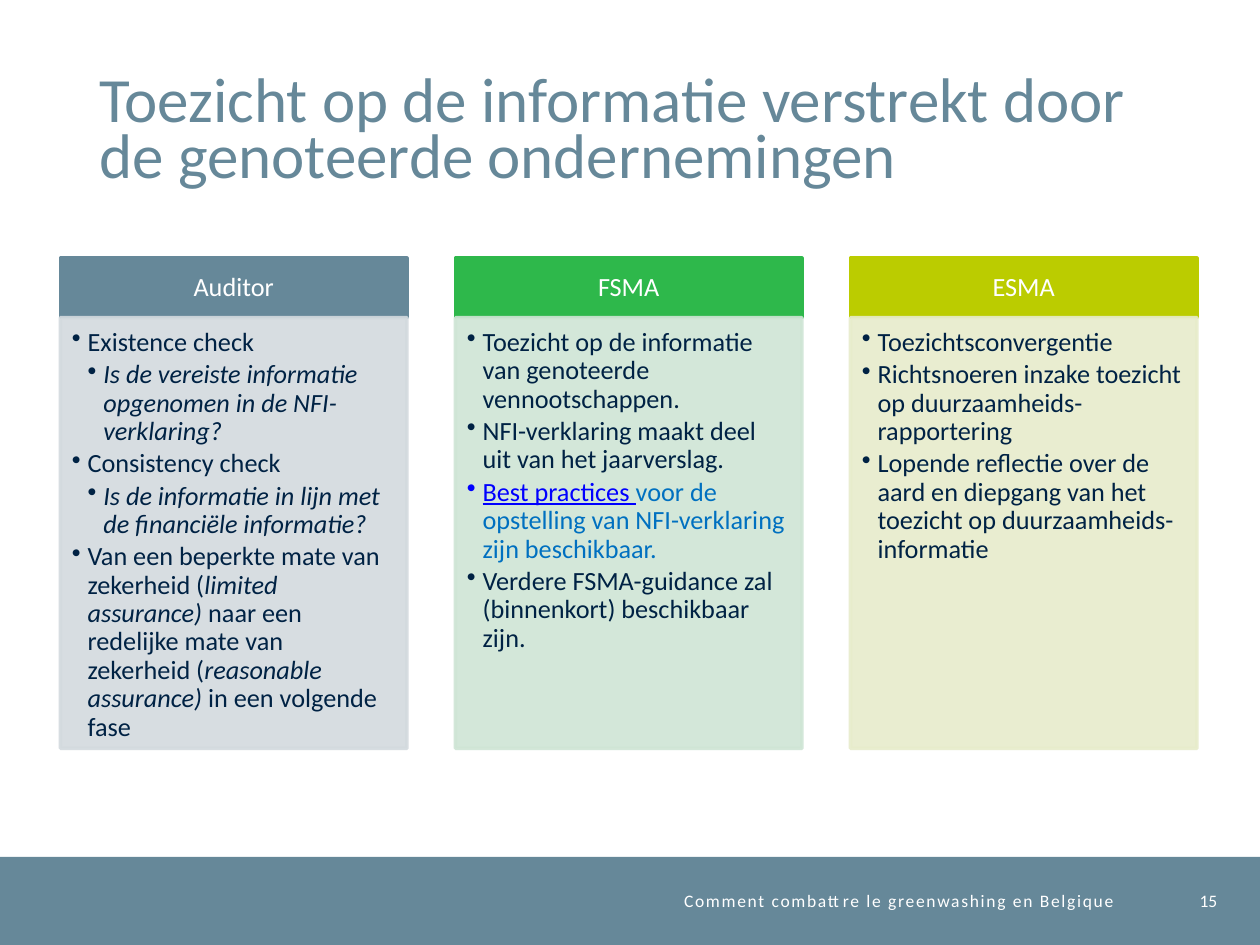
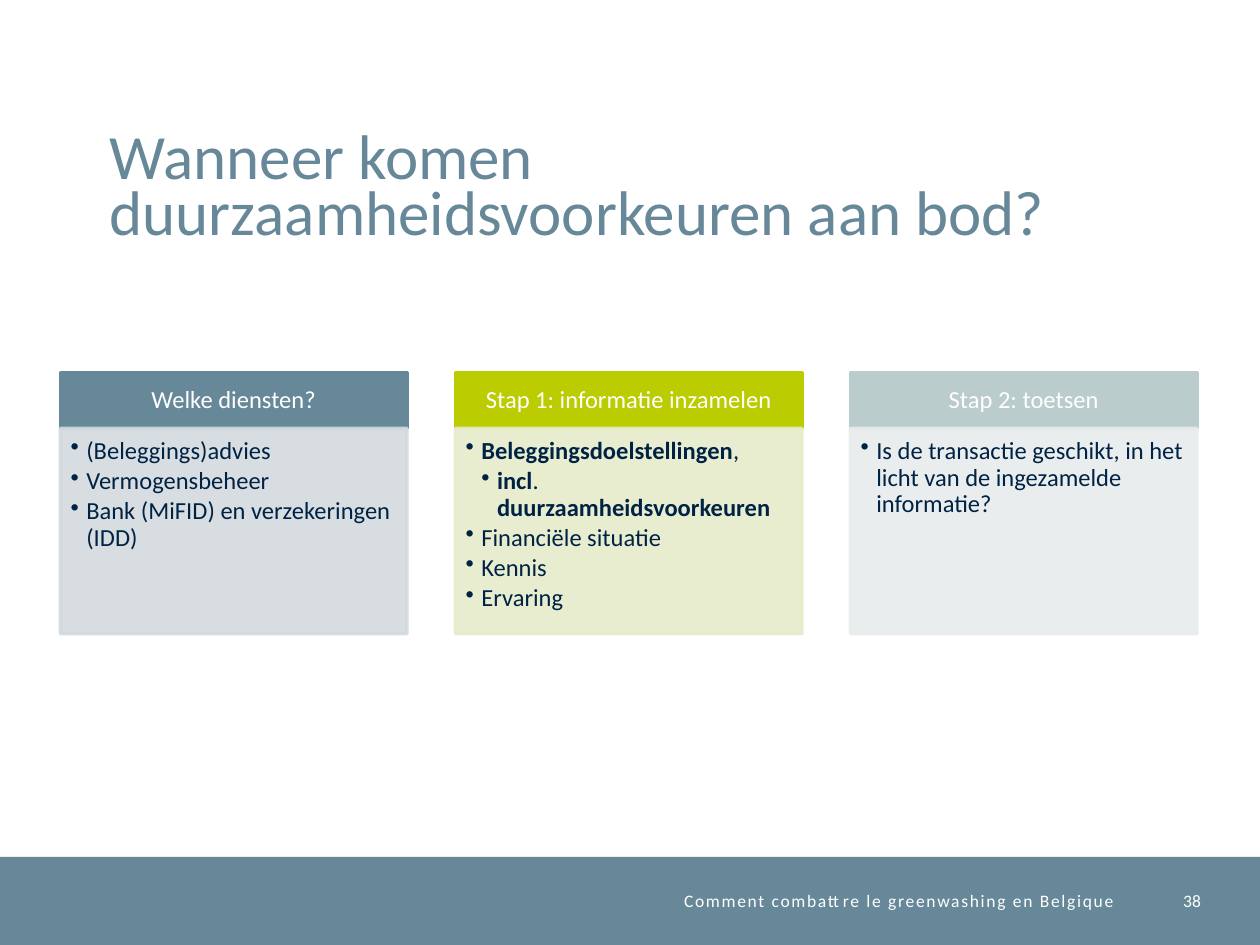
from dataclasses import dataclass

from lxml import etree
from pptx import Presentation
from pptx.dml.color import RGBColor
from pptx.enum.shapes import MSO_SHAPE
from pptx.enum.text import MSO_ANCHOR, MSO_AUTO_SIZE, PP_ALIGN
from pptx.oxml.ns import qn
from pptx.util import Inches, Pt

RECT = MSO_SHAPE.RECTANGLE
TOP, MIDDLE, BOTTOM = MSO_ANCHOR.TOP, MSO_ANCHOR.MIDDLE, MSO_ANCHOR.BOTTOM
LEFT, CENTER, RIGHT = PP_ALIGN.LEFT, PP_ALIGN.CENTER, PP_ALIGN.RIGHT
NO_FIT = MSO_AUTO_SIZE.NONE


@dataclass(frozen=True)
class Theme:
    font: str = "Calibri"
    slate: str = "668899"
    green: str = "2EB84B"
    lime: str = "BBCC00"
    mist: str = "BBCCCC"
    pale_slate: str = "D3DADE"
    pale_green: str = "CFE5D5"
    pale_lime: str = "E7ECCB"
    pale_mist: str = "E7ECEC"
    ink: str = "002244"
    white: str = "FFFFFF"
    link: str = "0000FF"
    blue: str = "0070C0"
    title: int = 36
    small: int = 10


THEME = Theme()
FOOTER = "Comment combattre le greenwashing en Belgique"
BAND_TOP, BAND_HIGH = 6.8, 0.7
CARD_LEFT, CARD_WIDE, CARD_STEP = 0.48, 2.75, 3.135
INDENT = 0.125


class Deck:
    def __init__(self, theme):
        self.theme = theme
        self.prs = Presentation()
        self.prs.slide_width = Inches(10)
        self.prs.slide_height = Inches(7.5)
        self.layout = self.prs.slide_layouts[5]
        self.slide = None

    def start(self):
        self.slide = self.prs.slides.add_slide(self.layout)
        if len(self.prs.slides) == 1:
            band = self.block((0, BAND_TOP, 10, BAND_HIGH), self.theme.slate)
            self.layout.shapes.element.insert(2, band.element)

    def frame(self, shape, anchor, pads=(0, 0, 0, 0)):
        frame = shape.text_frame
        frame.word_wrap = True
        frame.auto_size = NO_FIT
        frame.vertical_anchor = anchor
        left, top, right, bottom = pads
        frame.margin_left, frame.margin_top = Inches(left), Inches(top)
        frame.margin_right, frame.margin_bottom = Inches(right), Inches(bottom)
        return frame

    def run(self, para, text, size, color, style=""):
        run = para.add_run()
        run.text = text
        font = run.font
        font.name, font.size = self.theme.font, Pt(size)
        font.bold, font.italic = style == "bold", style == "italic"
        font.underline = style == "link"
        color = {"link": self.theme.link, "blue": self.theme.blue}.get(style, color)
        font.color.rgb = RGBColor.from_string(color)
        return run

    def title(self, text, left, top):
        shape = self.slide.shapes.title
        shape.left, shape.top = Inches(left), Inches(top)
        shape.width, shape.height = Inches(8.63), Inches(1.08)
        para = self.frame(shape, BOTTOM).paragraphs[0]
        para.alignment = LEFT
        para.line_spacing = Pt(32)
        self.run(para, text, self.theme.title, self.theme.slate)

    def label(self, text, left, wide, track=0):
        box = self.slide.shapes.add_textbox(
            *map(Inches, (left, BAND_TOP, wide, BAND_HIGH)))
        para = self.frame(box, MIDDLE).paragraphs[0]
        para.alignment = RIGHT
        run = self.run(para, text, self.theme.small, self.theme.white)
        if track:
            run.font._element.set("spc", str(track * 100))

    def footer(self, page, left):
        self.label(page, left, 0.49)
        self.label(FOOTER, 2.64, 6.2, track=1)

    def block(self, place, color, edge=0, alpha=100):
        shape = self.slide.shapes.add_shape(RECT, *map(Inches, place))
        shape.shadow.inherit = False
        shape.fill.solid()
        shape.fill.fore_color.rgb = RGBColor.from_string(color)
        if edge:
            shape.line.width = Pt(edge)
            shape.line.color.rgb = RGBColor.from_string(color)
        else:
            shape.line.fill.background()
        if alpha < 100:
            for tint in shape.element.spPr.iter(qn("a:srgbClr")):
                etree.SubElement(tint, qn("a:alpha"), val=str(alpha * 1000))
        return shape

    def bullet(self, para, level, size):
        para.level = level
        para.alignment = LEFT
        props = para._p.get_or_add_pPr()
        props.set("marL", str(Inches(INDENT * level)))
        props.set("indent", str(-Inches(INDENT)))
        etree.SubElement(props, qn("a:buChar"), char="•")
        para.line_spacing = 0.9
        para.space_after = Pt(size * 0.15)

    def card(self, left, top, highs, size, pads, head, items, color, pale):
        head_high, body_high = highs
        bar = self.block((left, top, CARD_WIDE, head_high), color, edge=2)
        para = self.frame(bar, MIDDLE, pads[0]).paragraphs[0]
        para.alignment = CENTER
        para.line_spacing = 0.9
        self.run(para, head, size, self.theme.white)

        body = self.block((left, top + head_high, CARD_WIDE, body_high),
                          pale, edge=2, alpha=90)
        frame = self.frame(body, TOP, pads[1])
        for index, (level, *parts) in enumerate(items):
            para = frame.add_paragraph() if index else frame.paragraphs[0]
            self.bullet(para, level, size)
            for text, *style in parts:
                self.run(para, text, size, self.theme.ink, *style)

    def cards(self, top, highs, size, pads, cards):
        for index, card in enumerate(cards):
            left = CARD_LEFT + index * CARD_STEP
            self.card(left, top, highs, size, pads, *card)

    def save(self):
        self.prs.save("out.pptx")


def plain(*lines):
    return [(1, (line,)) for line in lines]


CHECKS = [
    (1, ("Existence check",)),
    (2, ("Is de vereiste informatie opgenomen in de NFI-verklaring?", "italic")),
    (1, ("Consistency check",)),
    (2, ("Is de informatie in lijn met de financiële informatie?", "italic")),
    (1, ("Van een beperkte mate van zekerheid (",),
     ("limited assurance) ", "italic"),
     ("naar een redelijke mate van zekerheid (",),
     ("reasonable assurance) ", "italic"),
     ("in een volgende fase",)),
]
GUIDE = [
    *plain("Toezicht op de informatie van genoteerde vennootschappen.",
           "NFI-verklaring maakt deel uit van het jaarverslag."),
    (1, ("Best practices ", "link"),
     ("voor de opstelling van NFI-verklaring zijn beschikbaar.", "blue")),
    *plain("Verdere FSMA-guidance zal (binnenkort) beschikbaar zijn."),
]
REVIEW = plain(
    "Toezichtsconvergentie",
    "Richtsnoeren inzake toezicht op duurzaamheids-rapportering",
    "Lopende reflectie over de aard en diepgang van het toezicht op "
    "duurzaamheids-informatie",
)
SERVICES = plain("(Beleggings)advies", "Vermogensbeheer",
                 "Bank (MiFID) en verzekeringen (IDD)")
GOALS = [
    (1, ("Beleggingsdoelstellingen", "bold"), (",",)),
    (2, ("incl", "bold"), (". ",), ("duurzaamheidsvoorkeuren", "bold")),
    *plain("Financiële situatie", "Kennis", "Ervaring"),
]
TEST = plain("Is de transactie geschikt, in het licht van de "
             "ingezamelde informatie?")


def main():
    deck = Deck(THEME)
    slate = (THEME.slate, THEME.pale_slate)
    green = (THEME.green, THEME.pale_green)
    lime = (THEME.lime, THEME.pale_lime)
    mist = (THEME.mist, THEME.pale_mist)

    deck.start()
    deck.title("Toezicht op de informatie verstrekt door "
               "de genoteerde ondernemingen", 0.79, 0.44)
    deck.cards(2.05, (0.47, 3.42), 15,
               ((0.12, 0.07, 0.12, 0.07), (0.09, 0.09, 0.12, 0.13)),
               [("Auditor", CHECKS, *slate),
                ("FSMA", GUIDE, *green),
                ("ESMA", REVIEW, *lime)])
    deck.footer("15", 9.17)

    deck.start()
    deck.title("Wanneer komen duurzaamheidsvoorkeuren aan bod?", 0.87, 0.89)
    deck.cards(2.96, (0.44, 1.63), 14,
               ((0.11, 0.06, 0.11, 0.06), (0.08, 0.08, 0.11, 0.12)),
               [("Welke diensten?", SERVICES, *slate),
                ("Stap 1: informatie inzamelen", GOALS, *lime),
                ("Stap 2: toetsen", TEST, *mist)])
    deck.footer("38", 9.04)

    deck.save()


if __name__ == "__main__":
    main()
